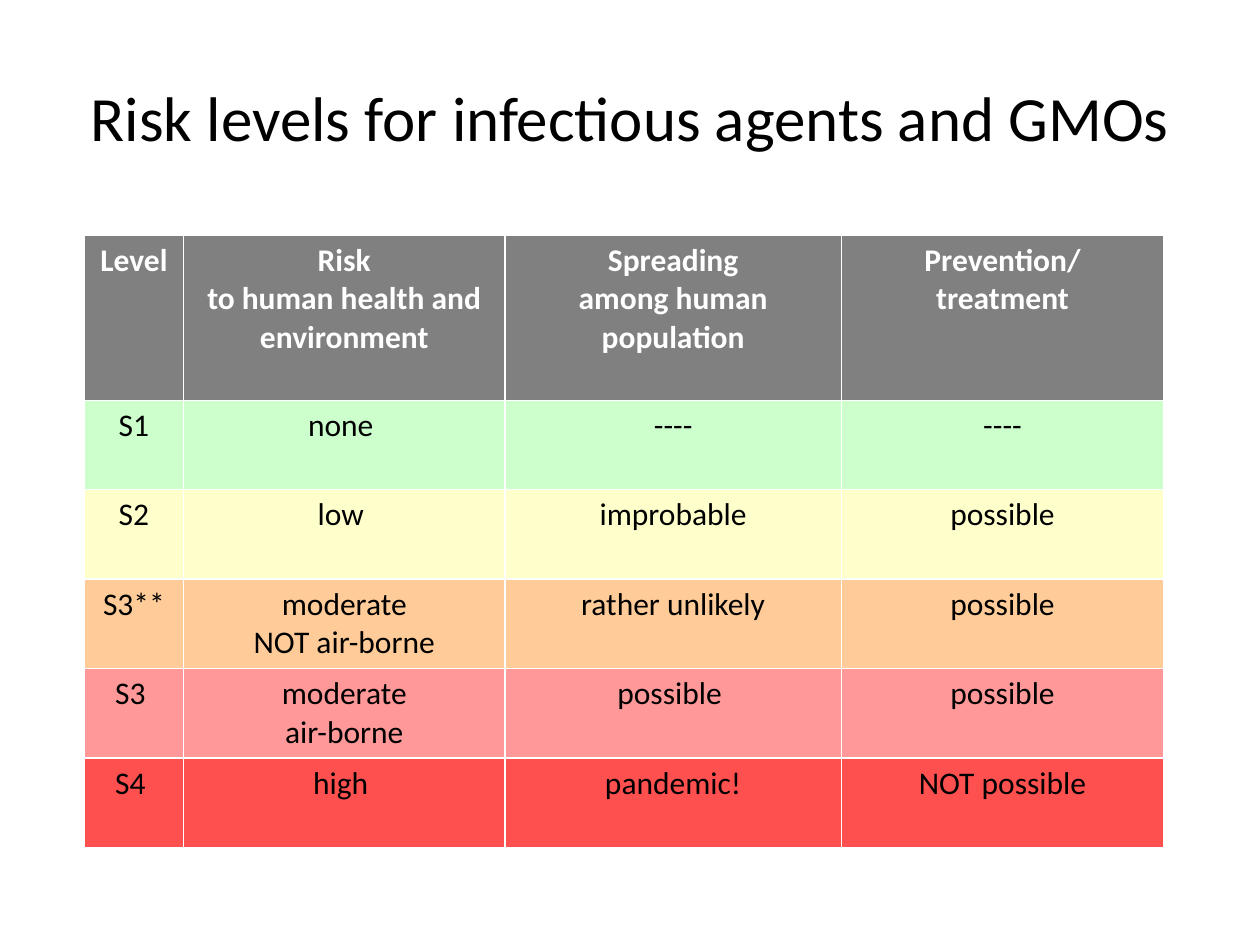
from pptx import Presentation
from pptx.dml.color import RGBColor
from pptx.enum.text import MSO_ANCHOR, PP_ALIGN
from pptx.util import Cm, Pt

FONT = "Calibri"
COLORS = {
    "black": "000000",
    "white": "FFFFFF",
    "header": "808080",
    "S1": "CCFFCC",
    "S2": "FFFFCC",
    "S3**": "FFCC99",
    "S3": "FF9999",
    "S4": "FF5050",
}
HEADINGS = [
    "Level",
    "Risk\vto human health and environment",
    "Spreading\namong human population",
    "Prevention/\ntreatment",
]
RISK_LEVELS = [
    ["S1", "none ", "----", "----"],
    ["S2", "low ", "improbable", "possible"],
    ["S3**", "moderate\nNOT air-borne", "rather unlikely", "possible"],
    ["S3 ", "moderate\nair-borne", "possible ", "possible"],
    ["S4 ", "high ", "pandemic!", "NOT possible"],
]
COLUMN_WIDTHS = [2, 6.48, 6.78, 6.5]
HEADER_HEIGHT = 3.33
LEVEL_HEIGHT = 1.8


def color(name):
    return RGBColor.from_string(COLORS[name])


def format_text(frame, size, text_color, bold=False):
    for paragraph in frame.paragraphs:
        paragraph.alignment = PP_ALIGN.CENTER
        paragraph.font.name = FONT
        paragraph.font.size = Pt(size)
        paragraph.font.bold = bold
        paragraph.font.color.rgb = color(text_color)


def add_title(slide, text):
    title = slide.shapes.title
    title.left, title.top = Cm(1.27), Cm(0.76)
    title.width, title.height = Cm(22.86), Cm(3.18)
    title.text_frame.text = text
    title.text_frame.vertical_anchor = MSO_ANCHOR.MIDDLE
    format_text(title.text_frame, 36, "black")


def fill_row(row, texts, fill, text_color, bold=False):
    for cell, text in zip(row.cells, texts):
        cell.text = text
        cell.fill.solid()
        cell.fill.fore_color.rgb = color(fill)
        format_text(cell.text_frame, 18, text_color, bold)


def add_risk_table(slide):
    heights = [HEADER_HEIGHT] + [LEVEL_HEIGHT] * len(RISK_LEVELS)
    table = slide.shapes.add_table(
        len(heights), len(COLUMN_WIDTHS), Cm(1.7), Cm(4.74),
        Cm(sum(COLUMN_WIDTHS)), Cm(sum(heights)),
    ).table
    for column, width in zip(table.columns, COLUMN_WIDTHS):
        column.width = Cm(width)
    for row, height in zip(table.rows, heights):
        row.height = Cm(height)

    header, *levels = table.rows
    fill_row(header, HEADINGS, "header", "white", bold=True)
    for row, texts in zip(levels, RISK_LEVELS):
        fill_row(row, texts, texts[0].strip(), "black")


def main():
    presentation = Presentation()
    presentation.slide_width = Cm(25.4)
    presentation.slide_height = Cm(19.05)
    slide = presentation.slides.add_slide(presentation.slide_layouts[5])
    add_title(slide, "Risk levels for infectious agents and GMOs")
    add_risk_table(slide)
    presentation.save("out.pptx")


if __name__ == "__main__":
    main()
